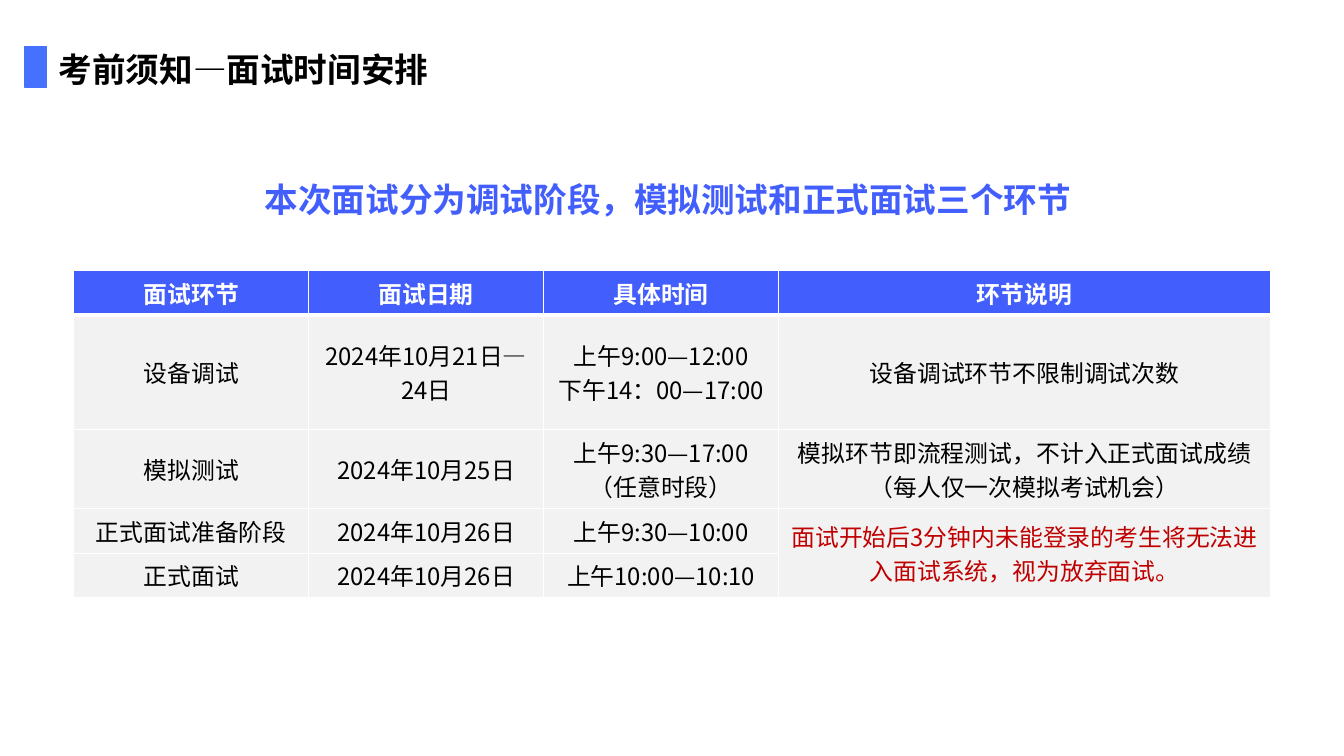
"""Build the slide that lists the interview stages and their times."""
from dataclasses import dataclass

from lxml import etree
from pptx import Presentation
from pptx.dml.color import RGBColor
from pptx.enum.shapes import MSO_SHAPE
from pptx.enum.text import MSO_ANCHOR, PP_ALIGN
from pptx.oxml.ns import qn
from pptx.util import Cm, Pt

RECTANGLE = MSO_SHAPE.RECTANGLE
MIDDLE, TOP = MSO_ANCHOR.MIDDLE, MSO_ANCHOR.TOP
CENTER, LEFT = PP_ALIGN.CENTER, PP_ALIGN.LEFT


@dataclass(frozen=True)
class Theme:
    marker: str = "4670FE"
    accent: str = "425EFD"
    body_fill: str = "F2F2F2"
    border: str = "FFFFFF"
    light: str = "FFFFFF"
    dark: str = "000000"
    warning: str = "C00000"
    font: str = "Noto Sans CJK SC"
    latin_font: str = "Arial"
    heading_size: int = 24
    table_size: int = 17


theme = Theme()


def write_text(frame, text, color, font_format, alignment):
    """Fill a text frame, one paragraph for each line of text."""
    for index, line in enumerate(text.split("\n")):
        paragraph = frame.paragraphs[0] if index == 0 else frame.add_paragraph()
        paragraph.alignment = alignment
        run = paragraph.add_run()
        run.text = line
        for name, value in font_format.items():
            setattr(run.font, name, value)
        run.font.color.rgb = RGBColor.from_string(color)
        east_asian = etree.SubElement(run.font._element, qn("a:ea"))
        east_asian.set("typeface", theme.font)


def set_borders(cell, widths):
    """Draw the four cell borders with the given widths in points."""
    properties = cell._tc.get_or_add_tcPr()
    for side, width in widths.items():
        line = etree.SubElement(properties, qn(f"a:ln{side}"), w=str(Pt(width)))
        fill = etree.SubElement(line, qn("a:solidFill"))
        etree.SubElement(fill, qn("a:srgbClr"), val=theme.border)


presentation = Presentation()
presentation.slide_width, presentation.slide_height = Cm(33.87), Cm(19.05)
slide = presentation.slides.add_slide(presentation.slide_layouts[6])

marker = slide.shapes.add_shape(RECTANGLE, Cm(0.63), Cm(1.18), Cm(0.54), Cm(1.02))
marker.shadow.inherit = False
marker.fill.solid()
marker.fill.fore_color.rgb = RGBColor.from_string(theme.marker)
marker.line.color.rgb = RGBColor.from_string(theme.marker)
marker.line.width = Pt(1)

headings = [
    ("考前须知—面试时间安排", (1.23, 1.02, 15.95, 1.45), theme.dark, theme.font, MIDDLE),
    ("本次面试分为调试阶段，模拟测试和正式面试三个环节", (6.42, 4.38, 21.03, 1.28),
     theme.accent, theme.latin_font, TOP),
]
for text, box, color, font_name, anchor in headings:
    frame = slide.shapes.add_textbox(*map(Cm, box)).text_frame
    frame.word_wrap = True
    frame.vertical_anchor = anchor
    heading_format = {"name": font_name, "size": Pt(theme.heading_size), "bold": True}
    write_text(frame, text, color, heading_format, LEFT)

schedule = [
    ["面试环节", "面试日期", "具体时间", "环节说明"],
    ["设备调试", "2024年10月21日—24日", "上午9:00—12:00\n下午14：00—17:00",
     "设备调试环节不限制调试次数"],
    ["模拟测试", "2024年10月25日", "上午9:30—17:00（任意时段）",
     "模拟环节即流程测试，不计入正式面试成绩（每人仅一次模拟考试机会）"],
    ["正式面试准备阶段", "2024年10月26日", "上午9:30—10:00",
     "面试开始后3分钟内未能登录的考生将无法进入面试系统，视为放弃面试。"],
    ["正式面试", "2024年10月26日", "上午10:00—10:10", ""],
]
column_widths = [5.92, 5.92, 5.92, 12.4]
row_heights = [1.12, 2.88, 2, 1.12, 1.12]
warning_cell = (3, 3)

table = slide.shapes.add_table(
    len(schedule), len(column_widths), Cm(1.86), Cm(6.82),
    Cm(sum(column_widths)), Cm(sum(row_heights)),
).table
for column, width in zip(table.columns, column_widths):
    column.width = Cm(width)

for row_index, row_texts in enumerate(schedule):
    table.rows[row_index].height = Cm(row_heights[row_index])
    is_header = row_index == 0
    cell_format = {"name": theme.font, "size": Pt(theme.table_size), "bold": is_header}
    borders = {"L": 1, "R": 1, "T": 1, "B": 3 if is_header else 1}
    for column_index, text in enumerate(row_texts):
        cell = table.cell(row_index, column_index)
        cell.vertical_anchor = MIDDLE
        set_borders(cell, borders)
        cell.fill.solid()
        fill_color = theme.accent if is_header else theme.body_fill
        cell.fill.fore_color.rgb = RGBColor.from_string(fill_color)
        color = theme.light if is_header else theme.dark
        if (row_index, column_index) == warning_cell:
            color = theme.warning
        if text:
            write_text(cell.text_frame, text, color, cell_format, CENTER)

table.cell(*warning_cell).merge(table.cell(4, 3))

presentation.save("out.pptx")
